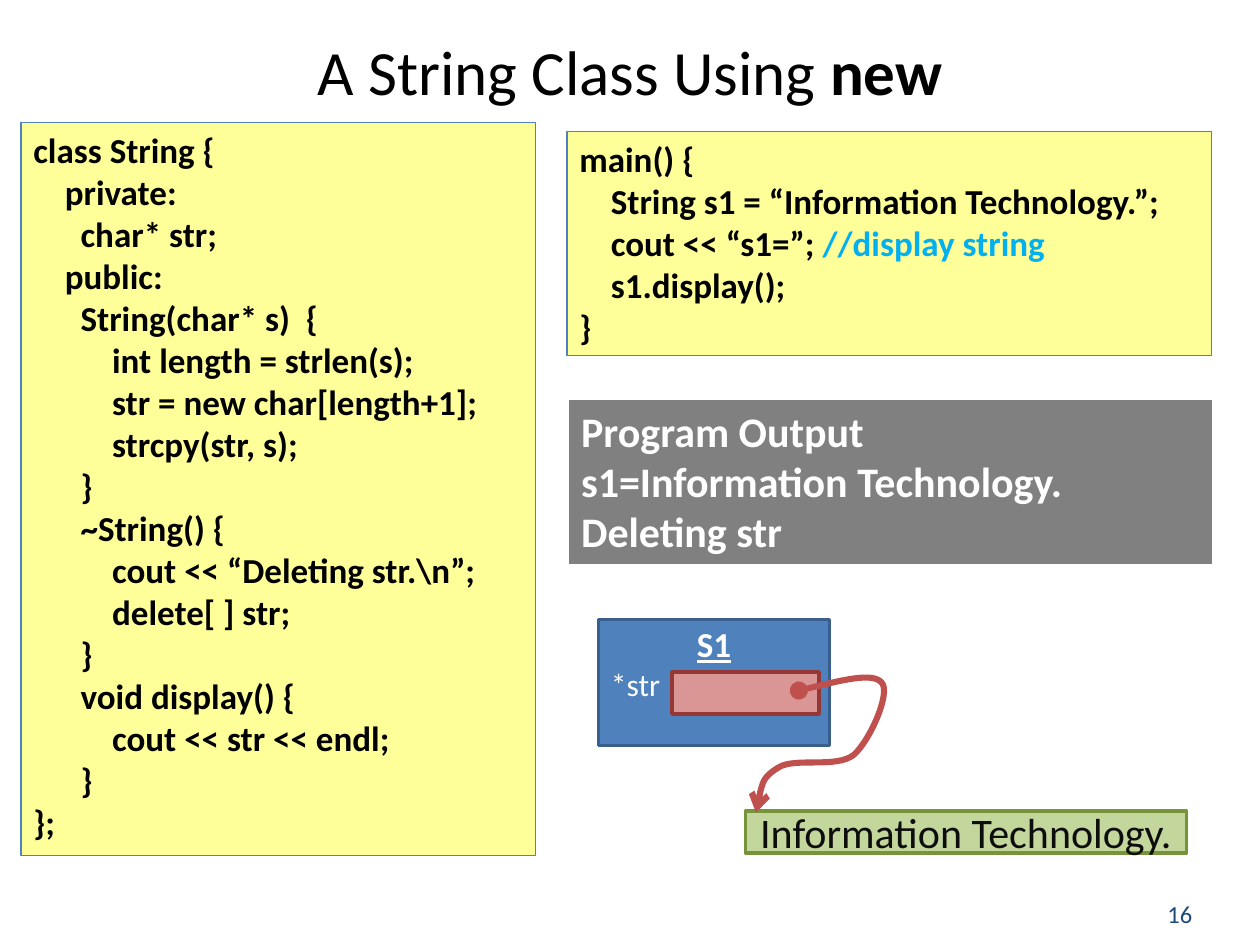
from dataclasses import dataclass, field

from lxml.etree import SubElement as Sub
from pptx import Presentation as Deck
from pptx.dml.color import RGBColor as Rgb
from pptx.enum.shapes import MSO_SHAPE as Shape
from pptx.enum.text import MSO_ANCHOR as Anchor, PP_ALIGN as Align
from pptx.oxml.ns import qn
from pptx.util import Pt

HUE = {
    "black": "000000", "ink": "0D0D0D", "white": "FFFFFF", "navy": "1F497D",
    "sky": "00B0F0", "yellow": "FFFF00", "gray": "808080",
    "blue": "4F81BD", "deep": "3A5F8C", "pink": "D99694", "wine": "953735",
    "lime": "C3D69B", "moss": "77933C", "red": "C0504D",
}


@dataclass
class Run:
    text: str
    size: float = 20
    hue: str = "black"
    bold: bool = False
    underline: bool = False


@dataclass
class Para:
    runs: list[Run]
    pad: float = 0
    align: Align = Align.LEFT


@dataclass
class Box:
    left: float
    top: float
    width: float
    height: float
    paras: list[Para] = field(default_factory=list)
    fill: str = ""
    edge: str = ""
    weight: float = 0.75
    alpha: int = 100
    anchor: Anchor = Anchor.MIDDLE
    inset: float = 3.6


def color(name: str) -> Rgb:
    return Rgb.from_string(HUE[name])


def code(text: str, pad: float = 0) -> Para:
    """Make one bold line of code; a comment turns sky blue."""
    head, mark, note = text.partition("//")
    runs = [Run(head, bold=True)]
    if mark:
        runs.append(Run(mark + note, hue="sky", bold=True))
    return Para(runs, pad)


def write(frame, box: Box) -> None:
    form = {"word_wrap": True, "vertical_anchor": box.anchor,
            "margin_top": Pt(box.inset), "margin_bottom": Pt(box.inset)}
    for key, value in form.items():
        setattr(frame, key, value)
    for i, para in enumerate(box.paras):
        line = frame.add_paragraph() if i else frame.paragraphs[0]
        line.alignment = para.align
        if para.pad:
            line._p.get_or_add_pPr().set("marL", str(Pt(para.pad)))
        for run in para.runs:
            part = line.add_run()
            part.text = run.text
            font = {"name": "Calibri", "size": Pt(run.size),
                    "bold": run.bold, "underline": run.underline}
            for key, value in font.items():
                setattr(part.font, key, value)
            part.font.color.rgb = color(run.hue)


def draw(slide, box: Box) -> None:
    spot = [Pt(n) for n in (box.left, box.top, box.width, box.height)]
    if not box.fill:
        write(slide.shapes.add_textbox(*spot).text_frame, box)
        return
    shape = slide.shapes.add_shape(Shape.RECTANGLE, *spot)
    shape.shadow.inherit = False
    shape.fill.solid()
    shape.fill.fore_color.rgb = color(box.fill)
    if box.alpha < 100:
        tint = shape._element.spPr.find(".//" + qn("a:srgbClr"))
        Sub(tint, qn("a:alpha"), val=str(box.alpha * 1000))
    shape.line.color.rgb = color(box.edge)
    shape.line.width = Pt(box.weight)
    if box.paras:
        write(shape.text_frame, box)


def curve(slide, dots: list[tuple[float, float]]) -> None:
    """Draw cubic curves through a start and triples of control points."""
    start, *rest = [(Pt(x), Pt(y)) for x, y in dots]
    pen = slide.shapes.build_freeform(*start)
    pen.add_line_segments(rest, close=False)
    shape = pen.convert_to_shape()
    shape.shadow.inherit = False
    shape.fill.background()
    shape.line.color.rgb = color("red")
    shape.line.width = Pt(3.5)
    props = shape._element.spPr
    steps = list(props.iter(qn("a:lnTo")))
    for i in range(0, len(steps), 3):
        bend = Sub(steps[i].getparent(), qn("a:cubicBezTo"))
        for step in steps[i:i + 3]:
            bend.append(step[0])
            step.getparent().remove(step)
    line = props.find(qn("a:ln"))
    Sub(line, qn("a:headEnd"), type="oval")
    Sub(line, qn("a:tailEnd"), type="arrow")


CLASS = [
    code("class String {"),
    code("private:", 18),
    code("char* str;", 27),
    code("public:", 18),
    code("String(char* s)  {", 27),
    code("int length = strlen(s);", 45),
    code("str = new char[length+1];", 45),
    code("strcpy(str, s);", 45),
    code("}", 27),
    code("~String() {", 27),
    code("cout << “Deleting str.\\n”;", 45),
    code("delete[ ] str;", 45),
    code("}", 27),
    code("void display() {", 27),
    code("cout << str << endl;", 45),
    code("}", 27),
    code("};"),
]
MAIN = [
    code("main() {"),
    code("String s1 = “Information Technology.”;", 18),
    code("cout << “s1=”; //display string", 18),
    code("s1.display();", 18),
    code("}"),
]
OUTPUT = [Para([Run(text, 24, "white", True)]) for text in
          ("Program Output", "s1=Information Technology.", "Deleting str")]
TITLE = [Para([Run("A String Class Using ", 36), Run("new", 36, bold=True)],
              align=Align.CENTER)]
OBJECT = [Para([Run("S1", 20, "white", True, True)], align=Align.CENTER),
          Para([Run("*str", 18, "white")])]
VALUE = [Para([Run("Information Technology.", 24, "ink")], align=Align.CENTER)]
PAGE = [Para([Run("16", 14, "navy")])]

BOXES = [
    Box(660, 510, 48, 24, PAGE),
    Box(36, 12, 648, 56, TITLE),
    Box(12, 70, 294, 419, CLASS, "yellow", "blue", alpha=40,
        anchor=Anchor.TOP),
    Box(324, 75, 368.5, 128, MAIN, "yellow", "blue", alpha=40,
        anchor=Anchor.TOP),
    Box(325, 228, 368, 94.5, OUTPUT, "gray", "white", anchor=Anchor.TOP),
    Box(342, 354, 132, 72, OBJECT, "blue", "deep", 2, anchor=Anchor.TOP,
        inset=2),
    Box(384, 384, 84, 24, fill="pink", edge="wine", weight=2),
    Box(426, 463.5, 252, 24, VALUE, "lime", "moss", 2),
]
POINTER = [
    (456.5, 394.6),
    (478, 389.5), (499, 383.8), (504, 390.2),
    (509, 396), (497.5, 422.6), (488, 431.3),
    (478, 439.2), (454.3, 432.7), (445, 438.5),
    (435.6, 444.2), (433.4, 454.3), (432, 464.4),
]


def main() -> None:
    deck = Deck()
    deck.slide_width, deck.slide_height = Pt(720), Pt(540)
    slide = deck.slides.add_slide(deck.slide_layouts[6])
    for box in BOXES:
        draw(slide, box)
    curve(slide, POINTER)
    deck.save("out.pptx")


if __name__ == "__main__":
    main()
